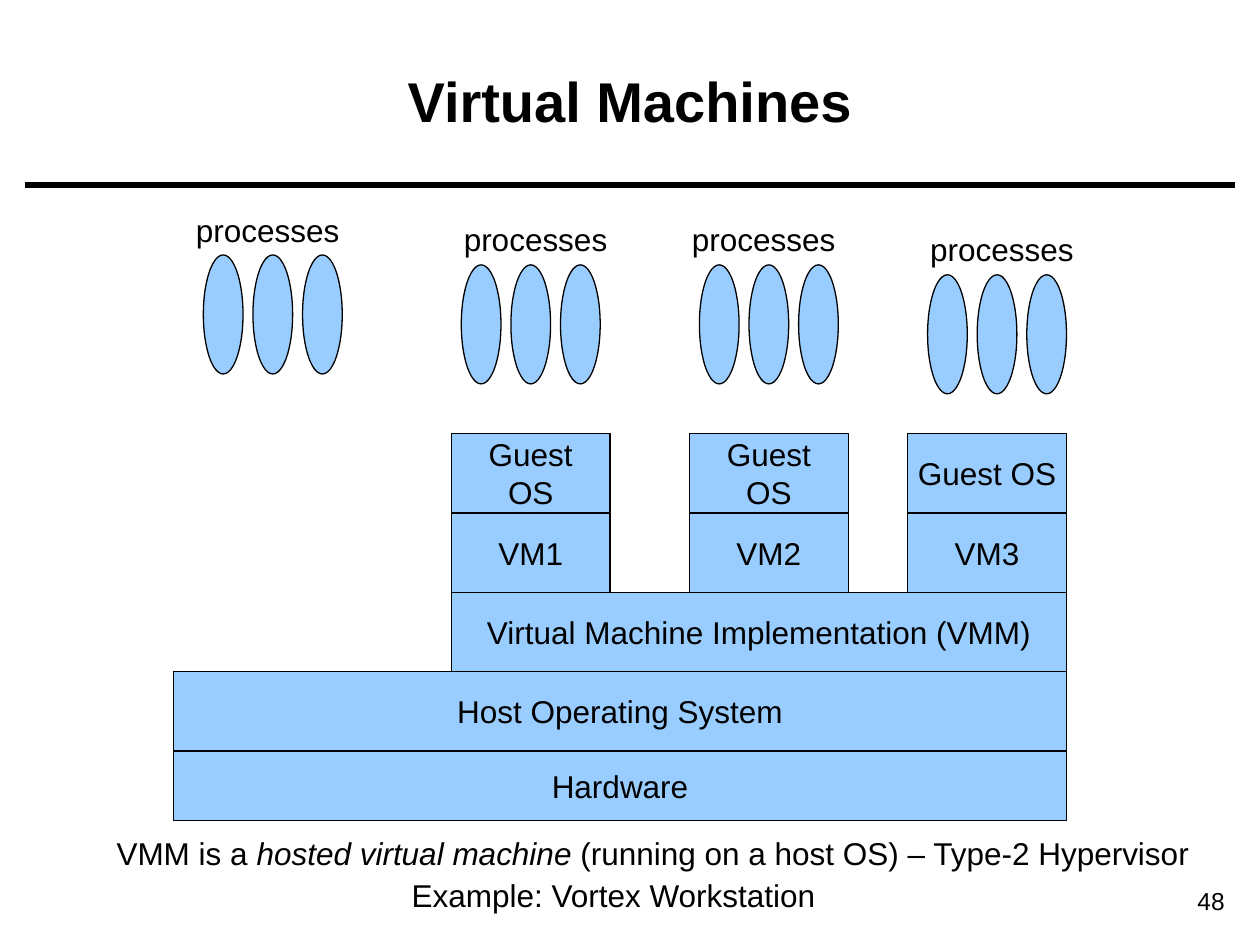
import pptx
import pptx.dml.color
import pptx.enum.shapes
import pptx.enum.text
import pptx.oxml.ns
import pptx.util
from lxml import etree

BLACK = pptx.dml.color.RGBColor(0x00, 0x00, 0x00)
SKY = pptx.dml.color.RGBColor(0x99, 0xCC, 0xFF)
SHAPE = pptx.enum.shapes.MSO_SHAPE
ALIGN = pptx.enum.text.PP_ALIGN
ANCHOR = pptx.enum.text.MSO_ANCHOR


class Diagram:
    """Draws styled elements on one page, measured in square grid cells."""

    columns = 127
    font_name = "Arial"
    body_size = 18

    def __init__(self, deck):
        self.cell = deck.slide_width / self.columns
        self.page = deck.slides.add_slide(deck.slide_layouts[6])

    def grid(self, *cells):
        return [pptx.util.Emu(round(count * self.cell)) for count in cells]

    def set_text(self, frame, spans, size, align, anchor, bold=False, wrap=False):
        frame.word_wrap = wrap
        frame.vertical_anchor = anchor
        para = frame.paragraphs[0]
        para.alignment = align
        para.font.name = self.font_name
        para.font.size = pptx.util.Pt(size)
        para.font.bold = bold
        para.font.color.rgb = BLACK
        for text, italic in spans:
            if "\v" in text:
                para.text = text
                continue
            span = para.add_run()
            span.text = text
            if italic:
                span.font.italic = True

    def label(self, place, *spans, size=body_size, align=ALIGN.LEFT,
              anchor=ANCHOR.TOP, bold=False, wrap=False):
        box = self.page.shapes.add_textbox(*self.grid(*place))
        self.set_text(box.text_frame, spans, size, align, anchor, bold, wrap)

    def shape(self, kind, place):
        shape = self.page.shapes.add_shape(kind, *self.grid(*place))
        shape.shadow.inherit = False
        shape.fill.solid()
        shape.fill.fore_color.rgb = SKY
        shape.line.color.rgb = BLACK
        shape.line.width = pptx.util.Pt(0.75)
        return shape

    def layer(self, text, place):
        box = self.shape(SHAPE.RECTANGLE, place)
        self.set_text(box.text_frame, [(text, False)], self.body_size,
                      ALIGN.CENTER, ANCHOR.MIDDLE)

    def processes(self, label_left, oval_left, top):
        for index in range(3):
            self.shape(SHAPE.OVAL, (oval_left + 5 * index, top, 4, 12))
        self.label((label_left, top - 5.1, 17, 5.1), ("processes", False))

    def rule(self, left, right, top, weight):
        line = self.page.shapes.add_connector(
            pptx.enum.shapes.MSO_CONNECTOR.STRAIGHT, *self.grid(left, top, right, top))
        line.line.color.rgb = BLACK
        line.line.width = pptx.util.Pt(weight)
        etree.SubElement(line._element.spPr, pptx.oxml.ns.qn("a:effectLst"))


def main():
    deck = pptx.Presentation()
    deck.slide_width = pptx.util.Inches(10)
    deck.slide_height = pptx.util.Inches(7.5)
    diagram = Diagram(deck)

    diagram.rule(2.5, 124.5, 18.65, 3)
    diagram.label((111.5, 88.65, 13.2, 4.3), ("48", False), size=14,
                  align=ALIGN.RIGHT, wrap=True)
    diagram.label((4.5, 2.15, 118, 15.9), ("Virtual Machines", False), size=32,
                  align=ALIGN.CENTER, anchor=ANCHOR.MIDDLE, bold=True, wrap=True)

    host_left, guest_left, right = 17.5, 45.5, 107.5
    guest_top, step = 43.7, 8
    vm_top, vmm_top, host_top, hardware_top = (
        guest_top + step * row for row in range(1, 5))
    diagram.layer("Hardware", (host_left, hardware_top, right - host_left, 7))
    diagram.layer("Host Operating System",
                  (host_left, host_top, right - host_left, step))
    diagram.layer("Virtual Machine Implementation (VMM)",
                  (guest_left, vmm_top, right - guest_left, step))

    machines = [("VM1", "Guest\vOS", guest_left), ("VM2", "Guest\vOS", 69.5),
                ("VM3", "Guest OS", 91.5)]
    for machine, guest, left in machines:
        diagram.layer(machine, (left, vm_top, 16, step))
        diagram.layer(guest, (left, guest_top, 16, step))

    for label_left, oval_left, top in [(18.5, 20.5, 25.7), (45.5, 46.5, 26.7),
                                       (68.5, 70.5, 26.7), (92.5, 93.5, 27.7)]:
        diagram.processes(label_left, oval_left, top)

    diagram.label((10.5, 83.45, 110.9, 5.1), ("VMM is a ", False),
                  ("hosted virtual machine ", True),
                  ("(running on a host OS) – Type-2 Hypervisor", False))
    diagram.label((40.25, 87.65, 47.25, 5.1), ("Example: Vortex Workstation", False))

    deck.save("out.pptx")


if __name__ == "__main__":
    main()
